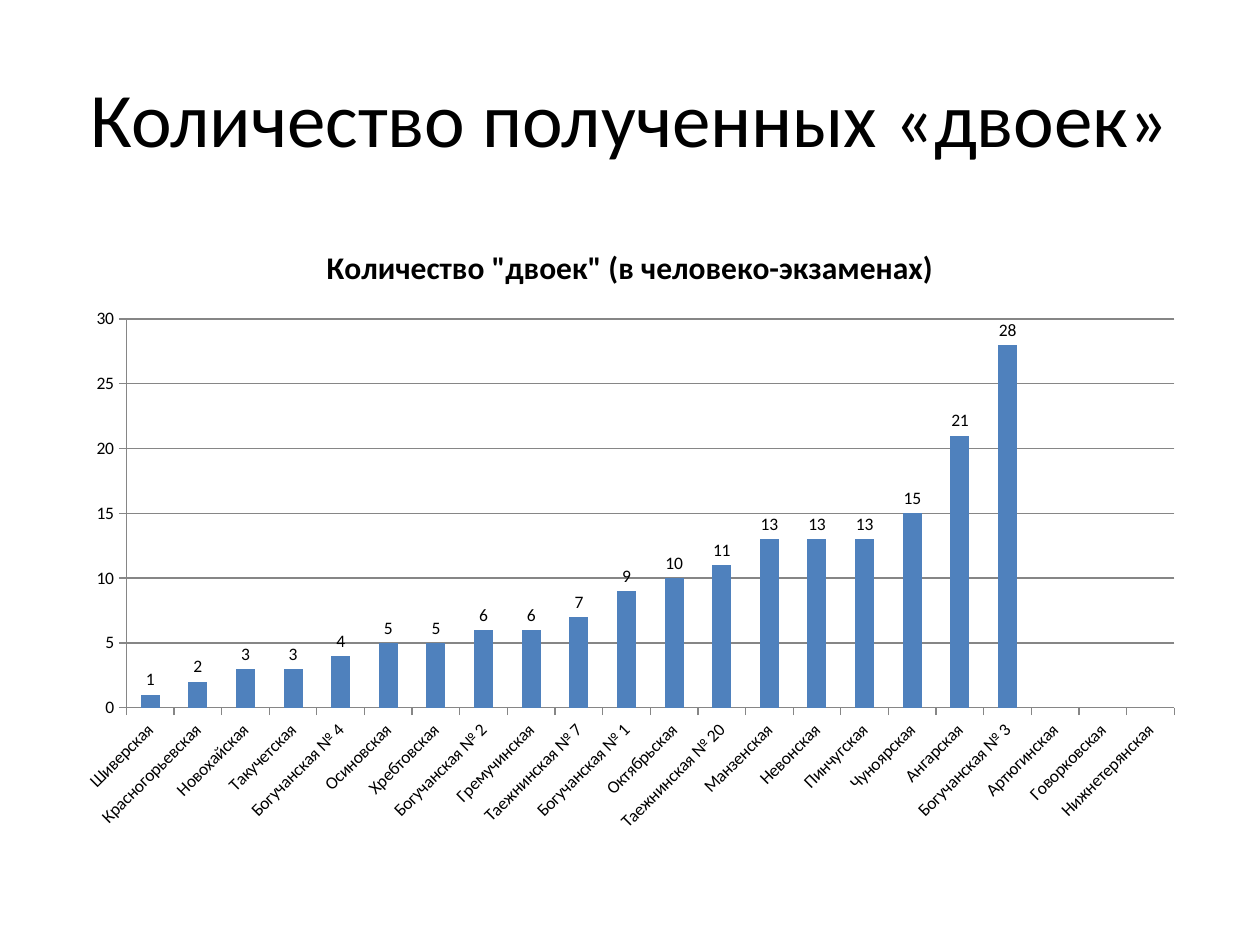
from pptx import Presentation
from pptx.chart.data import CategoryChartData
from pptx.dml.color import RGBColor
from pptx.enum.chart import XL_CHART_TYPE, XL_LABEL_POSITION, XL_TICK_MARK
from pptx.enum.text import MSO_ANCHOR, PP_ALIGN
from pptx.util import Pt

FONT = "Calibri"
BLACK, GREY, BLUE = "000000", "868686", "4F81BD"
SCHOOLS = [
    ("Шиверская", 1), ("Красногорьевская", 2), ("Новохайская", 3),
    ("Такучетская", 3), ("Богучанская № 4", 4), ("Осиновская", 5),
    ("Хребтовская", 5), ("Богучанская № 2", 6), ("Гремучинская", 6),
    ("Таежнинская № 7", 7), ("Богучанская № 1", 9), ("Октябрьская", 10),
    ("Таежнинская № 20", 11), ("Манзенская", 13), ("Невонская", 13),
    ("Пинчугская", 13), ("Чуноярская", 15), ("Ангарская", 21),
    ("Богучанская № 3", 28), ("Артюгинская", None), ("Говорковская", None),
    ("Нижнетерянская", None),
]


def color(code):
    return RGBColor.from_string(code)


def style(font, size, bold=False):
    font.name, font.size, font.bold = FONT, Pt(size), bold
    font.color.rgb = color(BLACK)


def rule(line):
    line.color.rgb = color(GREY)
    line.width = Pt(0.75)


def add_title(slide, text):
    box = slide.shapes.add_textbox(Pt(36), Pt(21.6), Pt(648), Pt(90))
    frame = box.text_frame
    frame.word_wrap = True
    frame.vertical_anchor = MSO_ANCHOR.MIDDLE
    frame.text = text
    para = frame.paragraphs[0]
    para.alignment = PP_ALIGN.CENTER
    style(para.runs[0].font, 44)


def add_bars(slide, title, rows):
    data = CategoryChartData()
    data.categories = [name for name, count in rows]
    data.add_series("Series 1", [count for name, count in rows])
    chart = slide.shapes.add_chart(
        XL_CHART_TYPE.COLUMN_CLUSTERED,
        Pt(36), Pt(126), Pt(648), Pt(356.4), data).chart
    style(chart.font, 10)
    chart.has_legend = False

    # Heading
    chart.has_title = True
    frame = chart.chart_title.text_frame
    frame.text = title
    style(frame.paragraphs[0].runs[0].font, 18, True)
    chart.chart_title.include_in_layout = False

    # Axes and grid
    for axis in (chart.category_axis, chart.value_axis):
        axis.major_tick_mark = XL_TICK_MARK.OUTSIDE
        axis.minor_tick_mark = XL_TICK_MARK.NONE
        rule(axis.format.line)
    values = chart.value_axis
    values.minimum_scale, values.maximum_scale = 0, 30
    values.major_unit = 5
    values.has_major_gridlines = True
    rule(values.major_gridlines.format.line)
    chart.category_axis.tick_labels.font.size = Pt(10)
    body = chart.category_axis.tick_labels.font._element.getparent().getparent().getparent().bodyPr
    body.set("rot", "-2700000")

    # Bars and labels
    plot = chart.plots[0]
    plot.gap_width = 150
    plot.vary_by_categories = False
    fill = plot.series[0].format.fill
    fill.solid()
    fill.fore_color.rgb = color(BLUE)
    labels = plot.series[0].data_labels
    labels.show_value = True
    labels.position = XL_LABEL_POSITION.OUTSIDE_END
    style(labels.font, 10)


def main():
    deck = Presentation()
    deck.slide_width, deck.slide_height = Pt(720), Pt(540)
    slide = deck.slides.add_slide(deck.slide_layouts[6])
    add_title(slide, "Количество полученных «двоек»")
    add_bars(slide, 'Количество "двоек" (в человеко-экзаменах)', SCHOOLS)
    deck.save("out.pptx")


if __name__ == "__main__":
    main()
